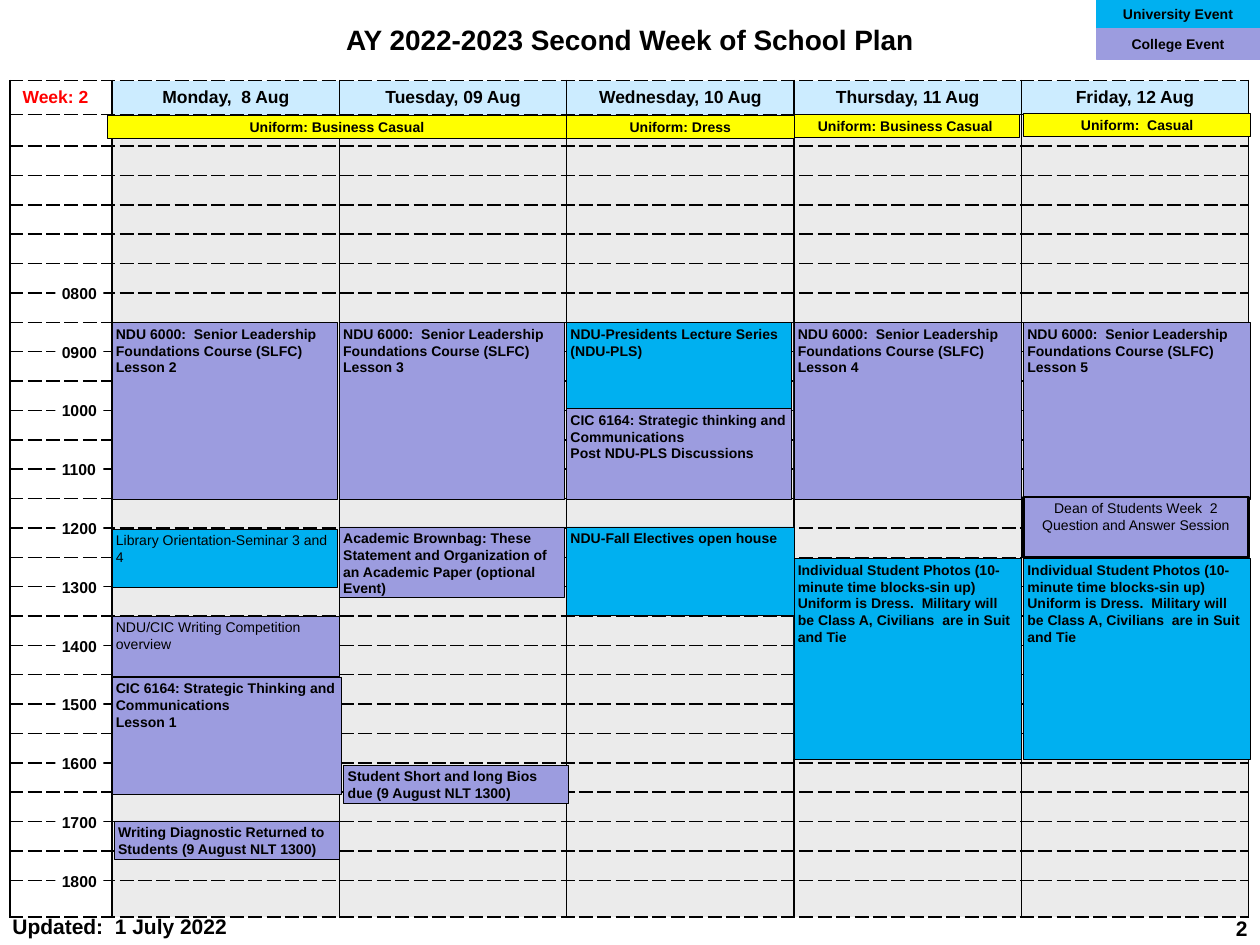
from dataclasses import dataclass
from typing import Optional

from lxml import etree
from pptx import Presentation, util as u
from pptx.dml.color import RGBColor
from pptx.enum import shapes, text
from pptx.oxml import ns


@dataclass(frozen=True)
class Theme:
    font: str = "Arial"
    ink: str = "000000"
    week: str = "FF0000"
    paper: str = "FFFFFF"
    header: str = "CCECFF"
    slot: str = "D9D9D9"
    university: str = "00B0F0"
    college: str = "9C9CDF"
    uniform: str = "FFFF00"
    title_pt: float = 16
    footer_pt: float = 12
    header_pt: float = 10
    hour_pt: float = 9
    event_pt: float = 8


@dataclass(frozen=True)
class Grid:
    left: float = 0.08
    top: float = 0.64
    hour_col: float = 0.81
    day_col: float = 9.02 / 5
    half_hour: float = 7 / 30
    eight: float = 2.33
    slots: int = 25

    def x(self, day: float) -> float:
        return self.left + self.hour_col + day * self.day_col

    def y(self, hour: float) -> float:
        return self.eight + (hour - 8) * 2 * self.half_hour


@dataclass(frozen=True)
class Event:
    day: float
    days: float
    hour: float
    hours: float
    fill: str
    lines: str
    bold: bool = True
    center: bool = False
    border: float = 0.5


@dataclass(frozen=True)
class Box:
    left: float
    top: float
    width: float
    height: float

    def emu(self) -> list:
        return [u.Inches(v) for v in (self.left, self.top, self.width, self.height)]


T = Theme()
G = Grid()
LEFT, CENTER, RIGHT = text.PP_ALIGN.LEFT, text.PP_ALIGN.CENTER, text.PP_ALIGN.RIGHT
TOP, MIDDLE = text.MSO_ANCHOR.TOP, text.MSO_ANCHOR.MIDDLE
DAYS = ["Monday,  8 Aug", "Tuesday, 09 Aug", "Wednesday, 10 Aug", "Thursday, 11 Aug", "Friday, 12 Aug"]
COURSE = "NDU 6000:  Senior Leadership Foundations Course (SLFC) Lesson "
PHOTOS = ("Individual Student Photos (10-minute time blocks-sin up)  Uniform is Dress.  "
          "Military will be Class A, Civilians  are in Suit and Tie")
EVENTS = [
    Event(0.01, 0.99, 16.97, 0.66, T.college, "Writing Diagnostic Returned to Students (9 August NLT 1300)"),
    Event(0, 0.99, 8.5, 3, T.college, COURSE + "2"),
    Event(1, 0.99, 8.5, 3, T.college, COURSE + "3"),
    Event(2, 0.99, 8.5, 1.5, T.university, "NDU-Presidents Lecture Series (NDU-PLS)"),
    Event(2, 0.99, 9.96, 1.54, T.college,
          "CIC 6164: Strategic thinking and Communications\nPost NDU-PLS Discussions"),
    Event(0, 1.01, 14.52, 2, T.college, "CIC 6164: Strategic Thinking and Communications\nLesson 1"),
    Event(1, 0.99, 11.97, 1.2, T.college,
          "Academic Brownbag: These Statement and Organization of an Academic Paper (optional Event)"),
    Event(2, 1, 11.97, 1.5, T.university, "NDU-Fall Electives open house"),
    Event(0, 1, 13.49, 1.03, T.college, "NDU/CIC Writing Competition overview", bold=False),
    Event(3, 1, 8.5, 3, T.college, COURSE + "4"),
    Event(4.01, 1, 4.94, 0.39, T.uniform, "Uniform:  Casual", center=True),
    Event(0, 0.99, 12.01, 0.99, T.university, "Library Orientation-Seminar 3 and 4", bold=False),
    Event(4.01, 1, 8.5, 3, T.college, COURSE + "5"),
    Event(4.01, 0.99, 11.46, 1.03, T.college, "Dean of Students Week  2 Question and Answer Session",
          bold=False, center=True, border=1.5),
    Event(3, 1, 12.51, 3.41, T.university, PHOTOS),
    Event(4.01, 1, 12.51, 3.41, T.university, PHOTOS),
    Event(-0.02, 2.02, 4.98, 0.39, T.uniform, "Uniform: Business Casual", center=True),
    Event(2.99, 1, 4.96, 0.39, T.uniform, "Uniform: Business Casual", center=True),
    Event(2, 1, 4.98, 0.39, T.uniform, "Uniform: Dress", center=True),
    Event(1.02, 0.99, 16.02, 0.66, T.college, "Student Short and long Bios due (9 August NLT 1300)"),
]


def write(tf, lines: str, size: float, align=LEFT, bold: bool = True, color: str = T.ink) -> None:
    tf.text = lines
    for p in tf.paragraphs:
        p.alignment = align
        for font in (p.font, *(r.font for r in p.runs)):
            font.name, font.size, font.bold = T.font, u.Pt(size), bold
            font.color.rgb = RGBColor.from_string(color)


def frame(tf, inset_x: float, inset_y: float, anchor=TOP, wrap: bool = True) -> None:
    tf.margin_left = tf.margin_right = u.Inches(inset_x)
    tf.margin_top = tf.margin_bottom = u.Inches(inset_y)
    tf.vertical_anchor, tf.word_wrap = anchor, wrap


def add_rect(s, box: Box, fill: str, line: Optional[str] = None, weight: float = 0.5):
    sp = s.shapes.add_shape(shapes.MSO_SHAPE.RECTANGLE, *box.emu())
    sp.shadow.inherit = False
    sp.fill.solid()
    sp.fill.fore_color.rgb = RGBColor.from_string(fill)
    if line:
        sp.line.color.rgb = RGBColor.from_string(line)
        sp.line.width = u.Pt(weight)
    else:
        sp.line.fill.background()
    return sp


def add_label(s, box: Box, label: str, align=LEFT, wrap: bool = True) -> None:
    tf = s.shapes.add_textbox(*box.emu()).text_frame
    frame(tf, 0.1, 0.05, wrap=wrap)
    write(tf, label, T.footer_pt, align)


def add_event(s, event: Event) -> None:
    box = Box(G.x(event.day), G.y(event.hour), event.days * G.day_col, event.hours * 2 * G.half_hour)
    tf = add_rect(s, box, event.fill, T.ink, event.border).text_frame
    frame(tf, 0.03, 0.02)
    write(tf, event.lines, T.event_pt, CENTER if event.center else LEFT, event.bold)


def paint_cell(cell, fill: Optional[str], alpha: Optional[int] = None) -> None:
    tc_pr = cell._tc.get_or_add_tcPr()
    if fill:
        cell.fill.solid()
        cell.fill.fore_color.rgb = RGBColor.from_string(fill)
    else:
        cell.fill.background()
    if alpha:
        color = tc_pr.find(".//" + ns.qn("a:srgbClr"))
        etree.SubElement(color, ns.qn("a:alpha"), val=str(alpha * 1000))
    for i, (side, dash) in enumerate(zip("LRTB", ("solid", "solid", "sysDash", "sysDash"))):
        ln = etree.Element(ns.qn("a:ln" + side), w=str(u.Pt(1)))
        solid = etree.SubElement(ln, ns.qn("a:solidFill"))
        etree.SubElement(solid, ns.qn("a:srgbClr"), val=T.ink)
        etree.SubElement(ln, ns.qn("a:prstDash"), val=dash)
        tc_pr.insert(i, ln)


def add_schedule(s) -> None:
    heights = [0.27, 0.25] + [G.half_hour] * G.slots + [0.29]
    widths = [G.hour_col] + [G.day_col] * len(DAYS)
    box = Box(G.left, G.top, sum(widths), sum(heights))
    tbl = s.shapes.add_table(len(heights), len(widths), *box.emu()).table
    tbl.first_row = tbl.horz_banding = False
    for col, width in zip(tbl.columns, widths):
        col.width = u.Inches(width)
    for i, (row, height) in enumerate(zip(tbl.rows, heights)):
        row.height = u.Inches(height)
        for j, cell in enumerate(row.cells):
            cell.vertical_anchor = MIDDLE
            cell.margin_top = cell.margin_bottom = 0
            if i == 0:
                paint_cell(cell, T.header if j else None)
                write(cell.text_frame, DAYS[j - 1] if j else "Week: 2", T.header_pt,
                      CENTER if j else LEFT, color=T.ink if j else T.week)
            else:
                paint_cell(cell, T.slot if j else None, 50 if j else None)
                p = cell.text_frame.paragraphs[0]
                etree.SubElement(p._p, ns.qn("a:endParaRPr"), sz=str(int(T.event_pt * 100)))


def main() -> None:
    prs = Presentation()
    prs.slide_width, prs.slide_height = u.Inches(10), u.Inches(7.5)
    s = prs.slides.add_slide(prs.slide_layouts[5])
    title = s.shapes.title
    title.left, title.top, title.width, title.height = Box(0, 0.13, 10, 0.37).emu()
    frame(title.text_frame, 0.1, 0.05, MIDDLE)
    write(title.text_frame, "AY 2022-2023 Second Week of School Plan", T.title_pt, CENTER)

    add_label(s, Box(0, 7.2, 1.92, 0.3), "Updated:  1 July 2022", wrap=False)
    add_schedule(s)
    add_label(s, Box(9.42, 7.22, 0.58, 0.25), "2", RIGHT)
    for hour in range(8, 19):
        sp = add_rect(s, Box(0.44, G.y(hour) - 0.1, 0.38, 0.19), T.paper)
        frame(sp.text_frame, 0.05, 0.02, wrap=False)
        write(sp.text_frame, f"{hour:02}00", T.hour_pt)
    legend = [("University Event", T.university, None), ("College Event", T.college, T.college)]
    for i, (label, fill, line) in enumerate(legend):
        sp = add_rect(s, Box(8.7, -0.01 + i * 0.24, 1.3, 0.24), fill, line, 0.75)
        frame(sp.text_frame, 0.1, 0.05, MIDDLE)
        write(sp.text_frame, label, T.event_pt, CENTER)
    for event in EVENTS:
        add_event(s, event)
    prs.save("out.pptx")


if __name__ == "__main__":
    main()
